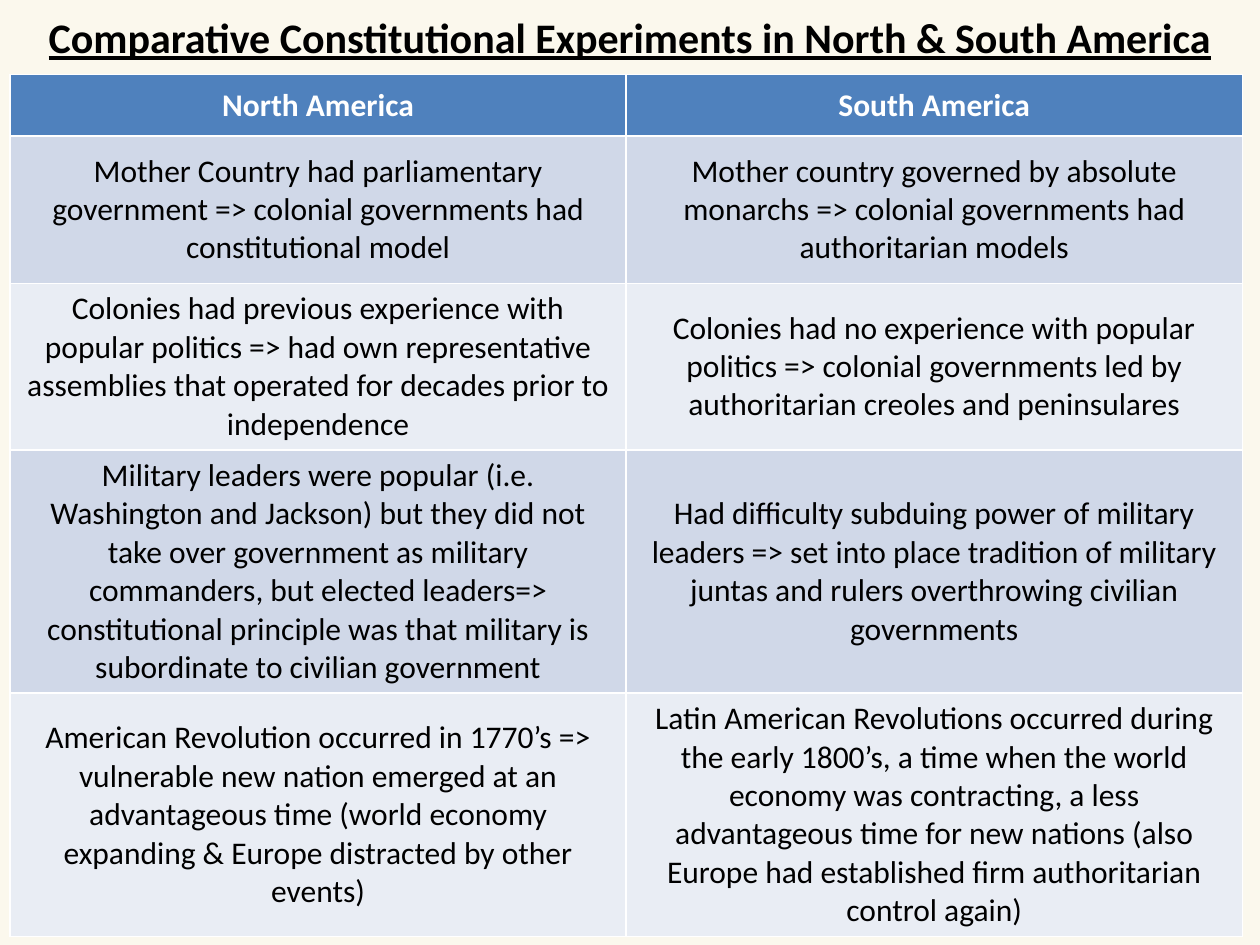
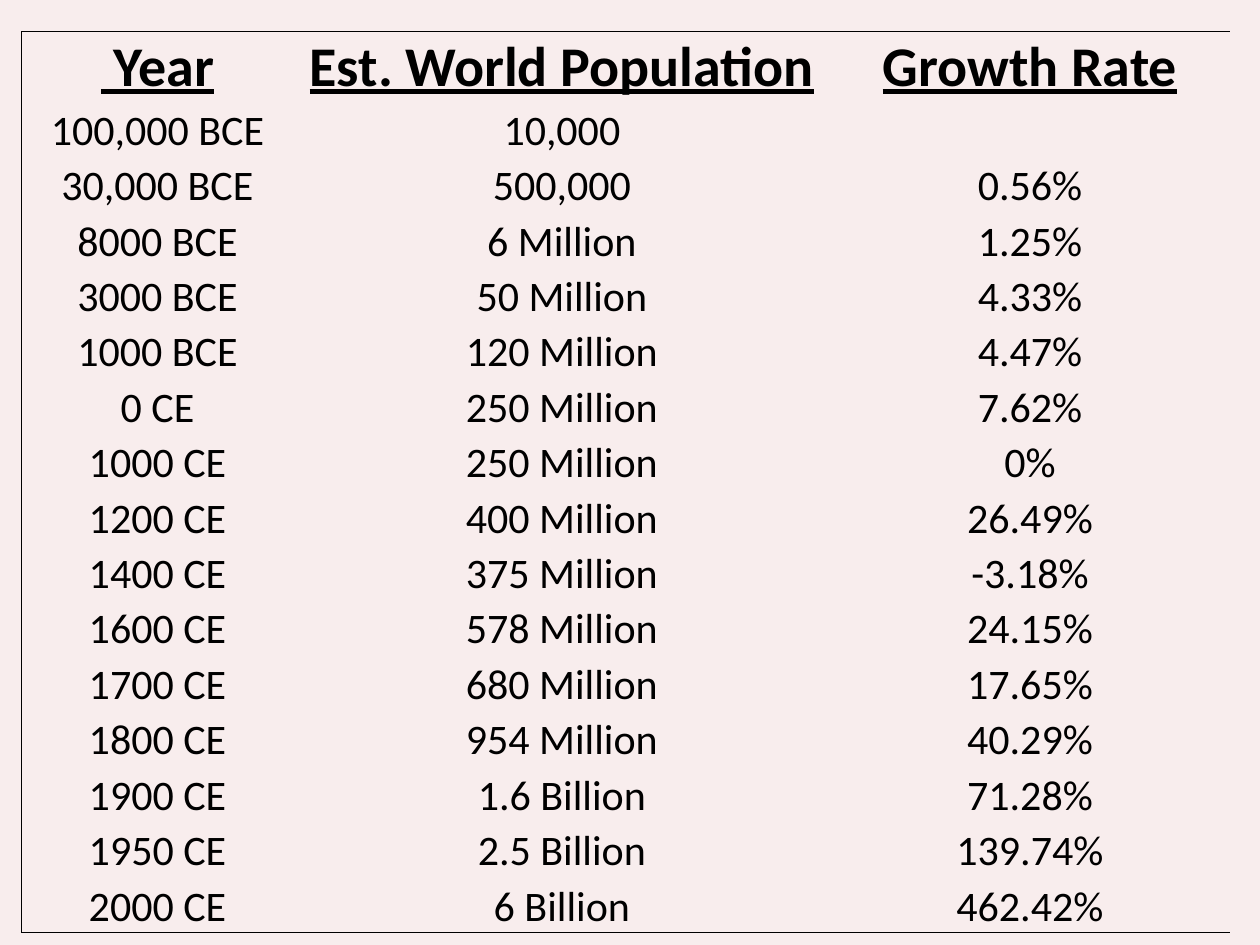
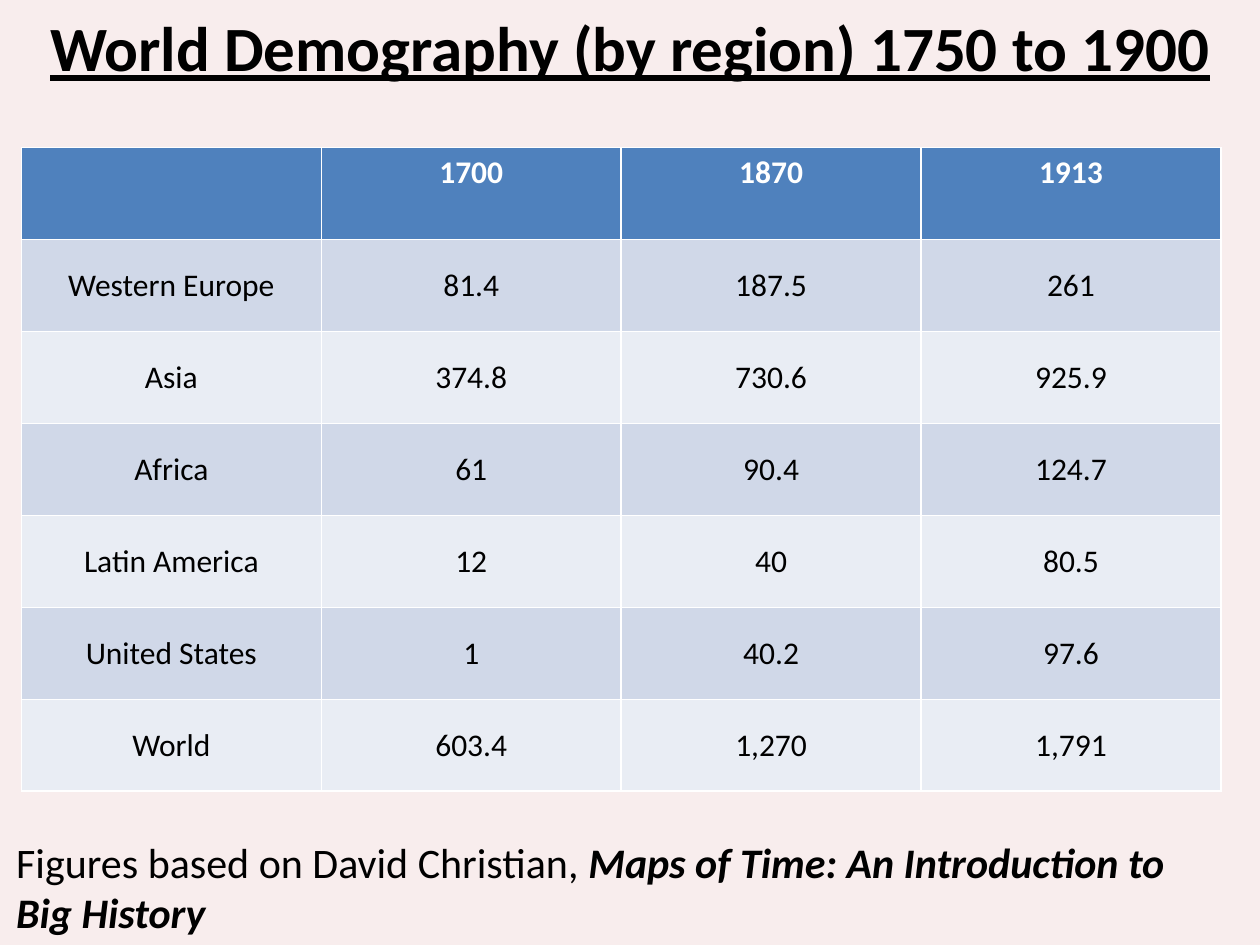
from lxml import etree
from pptx import Presentation
from pptx.dml.color import RGBColor
from pptx.enum.text import MSO_ANCHOR, PP_ALIGN
from pptx.oxml.ns import qn
from pptx.util import Inches, Pt

CENTER, LEFT = PP_ALIGN.CENTER, PP_ALIGN.LEFT
TOP, MIDDLE, BOTTOM = MSO_ANCHOR.TOP, MSO_ANCHOR.MIDDLE, MSO_ANCHOR.BOTTOM
FONT = "Calibri"
BLACK, WHITE = "000000", "FFFFFF"
HEADER_FILL = "4F81BD"
BAND_FILLS = ["E9EDF4", "D0D8E8"]
CREAM, PINK = "FBF8ED", "F8EDED"
TITLE_ONLY, BLANK = 5, 6


def write(para, text, size=18, color=BLACK, bold=False, italic=False, underline=False, align=CENTER):
    para.alignment = align
    span = para.add_run()
    span.text = text
    font = span.font
    font.name, font.size = FONT, Pt(size)
    font.bold, font.italic, font.underline = bold, italic, underline
    font.color.rgb = RGBColor.from_string(color)


def add_grid(page, left, top, columns, heights):
    frame = page.shapes.add_table(len(heights), len(columns), Inches(left), Inches(top),
                                  Inches(sum(columns)), Inches(sum(heights)))
    for column, width in zip(frame.table.columns, columns):
        column.width = Inches(width)
    for row, height in zip(frame.table.rows, heights):
        row.height = Inches(height)
    return frame.table


experiments = [
    ["North America", "South America"],
    ["Mother Country had parliamentary government => colonial governments had constitutional model",
     "Mother country governed by absolute monarchs => colonial governments had authoritarian models"],
    ["Colonies had previous experience with popular politics => had own representative assemblies "
     "that operated for decades prior to independence",
     "Colonies had no experience with popular politics => colonial governments led by "
     "authoritarian creoles and peninsulares"],
    ["Military leaders were popular (i.e. Washington and Jackson) but they did not take over "
     "government as military commanders, but elected leaders=> constitutional principle was that "
     "military is subordinate to civilian government",
     "Had difficulty subduing power of military leaders => set into place tradition of military "
     "juntas and rulers overthrowing civilian governments"],
    ["American Revolution occurred in 1770’s => vulnerable new nation emerged at an advantageous "
     "time (world economy expanding & Europe distracted by other events)",
     "Latin American Revolutions occurred during the early 1800’s, a time when the world economy "
     "was contracting, a less advantageous time for new nations (also Europe had established firm "
     "authoritarian control again)"],
]
populations = [
    [" Year", "Est. World Population", "Growth Rate"],
    ["100,000 BCE", "10,000", ""],
    ["30,000 BCE", "500,000", "0.56%"],
    ["8000 BCE", "6 Million", "1.25%"],
    ["3000 BCE", "50 Million", "4.33%"],
    ["1000 BCE", "120 Million", "4.47%"],
    ["0 CE", "250 Million", "7.62%"],
    ["1000 CE", "250 Million", "0%"],
    ["1200 CE", "400 Million", "26.49%"],
    ["1400 CE", "375 Million", "-3.18%"],
    ["1600 CE", "578 Million", "24.15%"],
    ["1700 CE", "680 Million", "17.65%"],
    ["1800 CE", "954 Million", "40.29%"],
    ["1900 CE", "1.6 Billion", "71.28%"],
    ["1950 CE", "2.5 Billion", "139.74%"],
    ["2000 CE", "6 Billion", "462.42%"],
]
regions = [
    ["", "1700", "1870", "1913"],
    ["Western Europe", "81.4", "187.5", "261"],
    ["Asia", "374.8", "730.6", "925.9"],
    ["Africa", "61", "90.4", "124.7"],
    ["Latin America", "12", "40", "80.5"],
    ["United States", "1", "40.2", "97.6"],
    ["World", "603.4", "1,270", "1,791"],
]

deck = Presentation()
deck.slide_width, deck.slide_height = Inches(10), Inches(7.5)
pages = []
for layout, background in [(TITLE_ONLY, CREAM), (BLANK, PINK), (TITLE_ONLY, PINK)]:
    page = deck.slides.add_slide(deck.slide_layouts[layout])
    page.background.fill.solid()
    page.background.fill.fore_color.rgb = RGBColor.from_string(background)
    pages.append(page)
experiment_page, population_page, region_page = pages

for page, text, size, height in [
    (experiment_page, "Comparative Constitutional Experiments in North & South America", 24, 0.42),
    (region_page, "World Demography (by region) 1750 to 1900", 36, 0.58),
]:
    title = page.shapes.title
    title.left, title.top = Inches(0), Inches(0.08)
    title.width, title.height = Inches(10), Inches(height)
    title.text_frame.vertical_anchor = MIDDLE
    write(title.text_frame.paragraphs[0], text, size=size, bold=True, underline=True)

experiment_grid = add_grid(experiment_page, 0.08, 0.59, [4.89] * 2, [0.49, 1.17, 1.27, 1.86, 1.93])
region_grid = add_grid(region_page, 0.17, 1.17, [2.38] * 4, [0.73] * len(regions))
for grid, rows, header_anchor in [(experiment_grid, experiments, MIDDLE), (region_grid, regions, TOP)]:
    for r, row in enumerate(rows):
        is_header = r == 0
        for c, text in enumerate(row):
            cell = grid.cell(r, c)
            cell.fill.solid()
            cell.fill.fore_color.rgb = RGBColor.from_string(HEADER_FILL if is_header else BAND_FILLS[r % 2])
            cell.vertical_anchor = header_anchor if is_header else MIDDLE
            if text:
                write(cell.text_frame.paragraphs[0], text, bold=is_header,
                      color=WHITE if is_header else BLACK)

last_row = len(populations) - 1
population_grid = add_grid(population_page, 0.17, 0.25, [2.16, 4.26, 3.17], [0.54] + [0.44] * last_row)
for r, row in enumerate(populations):
    is_header = r == 0
    for c, text in enumerate(row):
        cell = population_grid.cell(r, c)
        cell.vertical_anchor = BOTTOM
        cell.margin_left = cell.margin_right = cell.margin_top = Inches(0.01)
        cell.margin_bottom = 0
        properties = cell._tc.get_or_add_tcPr()
        edges = {"a:lnL": c == 0, "a:lnR": False, "a:lnT": is_header, "a:lnB": r == last_row}
        for edge, visible in edges.items():
            line = etree.SubElement(properties, qn(edge), w=str(Pt(0.5)))
            if visible:
                fill = etree.SubElement(line, qn("a:solidFill"))
                etree.SubElement(fill, qn("a:srgbClr"), val=BLACK)
            else:
                etree.SubElement(line, qn("a:noFill"))
        cell.fill.background()
        if text:
            write(cell.text_frame.paragraphs[0], text, size=32 if is_header else 24,
                  bold=is_header, underline=is_header)

source_box = region_page.shapes.add_textbox(Inches(0.03), Inches(6.59), Inches(9.75), Inches(0.91))
source_box.text_frame.word_wrap = True
source_para = source_box.text_frame.paragraphs[0]
write(source_para, "Figures based on David Christian, ", size=24, align=LEFT)
write(source_para, "Maps of Time: An Introduction to Big History", size=24, bold=True, italic=True, align=LEFT)

deck.save("out.pptx")
